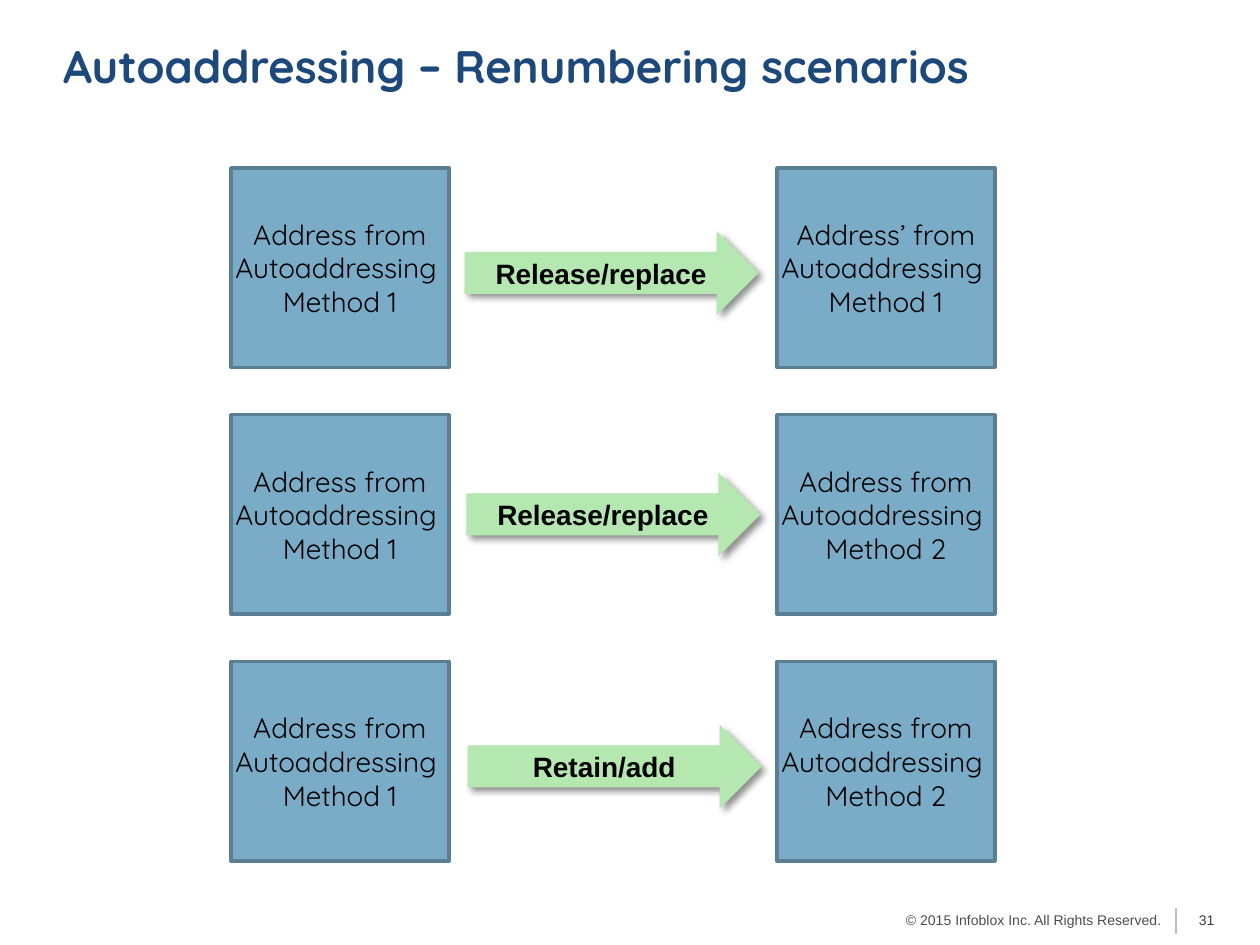
from lxml.etree import SubElement
from pptx import Presentation
from pptx.dml.color import RGBColor
from pptx.enum.shapes import MSO_CONNECTOR, MSO_SHAPE
from pptx.enum.text import MSO_ANCHOR, PP_ALIGN
from pptx.oxml.ns import qn
from pptx.util import Pt

BOX = dict(name="Quicksand", size=Pt(16), bold=False)
ARROW = dict(name="Arial", size=Pt(16), bold=True)
TITLE = dict(name="Quicksand", size=Pt(26), bold=True)
FOOTER = dict(name="Arial", size=Pt(8), bold=False)

# Start address, action, new address, method, arrow left and top
SCENARIOS = [
    ("Address", "Release/replace", "Address’", 1, 265.5, 132),
    ("Address", "Release/replace", "Address", 2, 266.5, 270),
    ("Address", "Retain/add", "Address", 2, 267.25, 414),
]


def rgb(value):
    return RGBColor.from_string(value)


def write(tf, lines, fmt, color, align):
    for i, line in enumerate(lines):
        p = tf.paragraphs[0] if i == 0 else tf.add_paragraph()
        p.alignment = align
        r = p.add_run()
        r.text = line
        for key, value in fmt.items():
            setattr(r.font, key, value)
        r.font.color.rgb = rgb(color)


def add_block(s, kind, left, top, width, height, fill, lines, fmt):
    sp = s.shapes.add_shape(kind, Pt(left), Pt(top), Pt(width), Pt(height))
    sp.shadow.inherit = False
    sp.fill.solid()
    sp.fill.fore_color.rgb = rgb(fill)
    sp.line.fill.background()
    tf = sp.text_frame
    tf.word_wrap = False
    tf.vertical_anchor = MSO_ANCHOR.MIDDLE
    write(tf, lines, fmt, "000000", PP_ALIGN.CENTER)
    return sp


def add_address(s, left, top, address, method):
    lines = [f"{address} from", "Autoaddressing ", f"Method {method}"]
    sp = add_block(s, MSO_SHAPE.RECTANGLE, left, top, 124.5, 114, "7AACC8", lines, BOX)
    sp.line.color.rgb = rgb("5A7F94")
    sp.line.width = Pt(2)


def add_action(s, left, top, label):
    sp = add_block(s, MSO_SHAPE.RIGHT_ARROW, left, top, 168, 48, "B5E7B1", [label], ARROW)
    # Soft shadow towards the lower right
    effects = sp._element.spPr.find(qn("a:effectLst"))
    shadow = SubElement(effects, qn("a:outerShdw"), blurRad=str(Pt(4)),
                        dist=str(Pt(3)), dir="2700000", algn="tl", rotWithShape="0")
    color = SubElement(shadow, qn("a:srgbClr"), val="000000")
    SubElement(color, qn("a:alpha"), val="43000")


def add_title(s, text):
    sp = s.shapes.title
    sp.left, sp.top, sp.width, sp.height = Pt(36), Pt(7.2), Pt(666), Pt(60)
    tf = sp.text_frame
    for side in ("left", "top", "right", "bottom"):
        setattr(tf, f"margin_{side}", 0)
    tf.vertical_anchor = MSO_ANCHOR.MIDDLE
    write(tf, [text], TITLE, "1C487B", PP_ALIGN.LEFT)


def add_note(s, left, width, height, text, color, align):
    sp = s.shapes.add_textbox(Pt(left), Pt(517.5), Pt(width), Pt(height))
    sp.text_frame.word_wrap = True
    write(sp.text_frame, [text], FOOTER, color, align)


def add_divider(s, x, top, bottom):
    line = s.shapes.add_connector(MSO_CONNECTOR.STRAIGHT, Pt(x), Pt(top), Pt(x), Pt(bottom))
    line.line.color.rgb = rgb("BFBFBF")
    line.line.width = Pt(1)
    SubElement(line._element.spPr, qn("a:effectLst"))


def main():
    prs = Presentation()
    prs.slide_width, prs.slide_height = Pt(720), Pt(540)
    s = prs.slides.add_slide(prs.slide_layouts[5])
    add_title(s, "Autoaddressing – Renumbering scenarios")

    # One row per renumbering scenario
    for row, (old, action, new, method, left, top) in enumerate(SCENARIOS):
        y = 96 + 141 * row
        add_address(s, 132, y, old, 1)
        add_action(s, left, top, action)
        add_address(s, 444, y, new, method)

    # Footer
    add_note(s, 340, 331, 19.5, "© 2015 Infoblox Inc. All Rights Reserved.", "4D4D4D", PP_ALIGN.RIGHT)
    add_divider(s, 672, 519, 534)
    add_note(s, 678, 30, 14.5, "31", "404040", PP_ALIGN.LEFT)
    prs.save("out.pptx")


if __name__ == "__main__":
    main()
